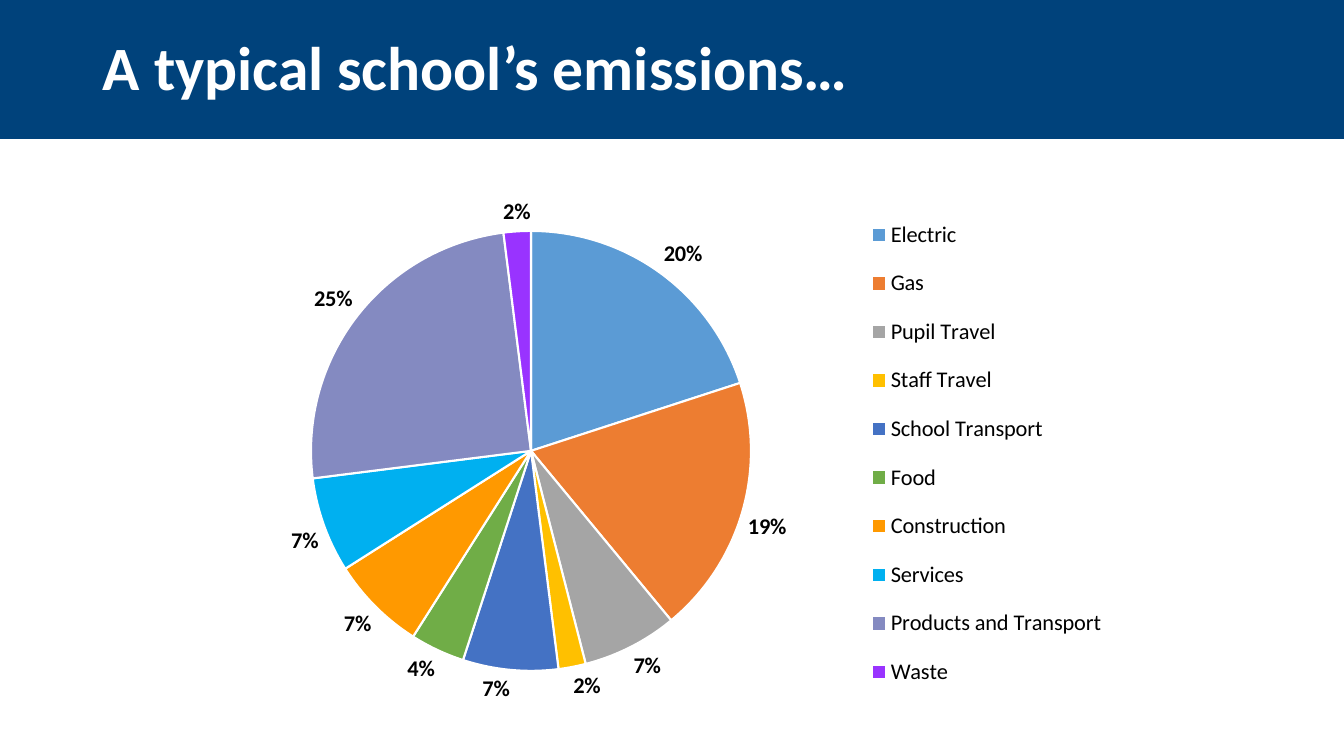
from pptx import Presentation
from pptx.chart.data import CategoryChartData
from pptx.dml.color import RGBColor
from pptx.enum.chart import XL_CHART_TYPE as ChartType
from pptx.enum.chart import XL_LABEL_POSITION as LabelPosition
from pptx.enum.chart import XL_LEGEND_POSITION as LegendPosition
from pptx.enum.shapes import MSO_SHAPE as Shape
from pptx.enum.text import MSO_ANCHOR as Anchor
from pptx.oxml import parse_xml
from pptx.oxml.ns import nsdecls, qn
from pptx.util import Emu, Inches, Pt

# Content
TITLE = "A typical school’s emissions…"
EMISSIONS = [  # source, percent, colour
    ("Electric", 20, "5B9BD5"),
    ("Gas", 19, "ED7D31"),
    ("Pupil Travel", 7, "A5A5A5"),
    ("Staff Travel", 2, "FFC000"),
    ("School Transport", 7, "4472C4"),
    ("Food", 4, "70AD47"),
    ("Construction", 7, "FF9900"),
    ("Services", 7, "00B0F0"),
    ("Products and Transport", 25, "848AC1"),
    ("Waste", 2, "9933FF"),
]
COLORS = {"banner": "00427B", "white": "FFFFFF", "black": "000000"}
FONT = "Calibri"

# Geometry in px: left, top, width, height
PX = Inches(1) / 100.8
BANNER = (0, 0, 1344, 139)
TITLE_BOX = (93, 22, 1159, 98)
CHART = (192, 183, 944, 535)
PIE = (311, 231, 440, 440)
LEGEND = (862, 200, 250, 507)


def px(*lengths):
    return [Emu(round(length * PX)) for length in lengths]


def color(name):
    return RGBColor.from_string(COLORS.get(name, name))


def style(font, size, name, bold=False):
    font.name, font.size, font.bold = FONT, Pt(size), bold
    font.color.rgb = color(name)


def manual_layout(area, inner=False):
    """Layout element placing an area as fractions of the chart."""
    left, top, width, height = CHART
    fractions = {
        "x": (area[0] - left) / width,
        "y": (area[1] - top) / height,
        "w": area[2] / width,
        "h": area[3] / height,
    }
    target = '<c:layoutTarget val="inner"/>' if inner else ""
    modes = '<c:xMode val="edge"/><c:yMode val="edge"/>'
    sizes = "".join(f'<c:{key} val="{part:.4f}"/>' for key, part in fractions.items())
    return parse_xml(
        f'<c:layout {nsdecls("c")}><c:manualLayout>{target}{modes}{sizes}'
        "</c:manualLayout></c:layout>"
    )


def drop_layout(element):
    for layout in element.findall(qn("c:layout")):
        element.remove(layout)


deck = Presentation()
deck.slide_width, deck.slide_height = Inches(13.333), Inches(7.5)
page = deck.slides.add_slide(deck.slide_layouts[6])

# Banner and title
banner = page.shapes.add_shape(Shape.RECTANGLE, *px(*BANNER))
banner.shadow.inherit = False
banner.fill.solid()
banner.fill.fore_color.rgb = color("banner")
banner.line.fill.background()

box = page.shapes.add_textbox(*px(*TITLE_BOX))
frame = box.text_frame
frame.word_wrap = True
frame.vertical_anchor = Anchor.MIDDLE
frame.text = TITLE
para = frame.paragraphs[0]
para.line_spacing = 0.9
style(para.runs[0].font, 44, "white", bold=True)

# Pie chart
data = CategoryChartData()
data.categories = [source for source, _, _ in EMISSIONS]
data.add_series("Series 1", [percent for _, percent, _ in EMISSIONS])
chart = page.shapes.add_chart(ChartType.PIE, *px(*CHART), data).chart
chart.has_title = False
style(chart.font, 10, "black")

plot = chart.plots[0]
plot.vary_by_categories = True
for index, (_, _, fill) in enumerate(EMISSIONS):
    slice_format = plot.series[0].points[index].format
    slice_format.fill.solid()
    slice_format.fill.fore_color.rgb = color(fill)
    slice_format.line.color.rgb = color("white")
    slice_format.line.width = Pt(1.5)

labels = plot.series[0].data_labels
labels.show_percentage = True
labels.show_value = False
labels.number_format, labels.number_format_is_linked = "0%", False
labels.position = LabelPosition.OUTSIDE_END
style(labels.font, 16, "black", bold=True)

# Legend and placement inside the chart
chart.has_legend = True
legend = chart.legend
legend.position = LegendPosition.RIGHT
legend.include_in_layout = False
style(legend.font, 16, "black")

legend_element = legend._element
drop_layout(legend_element)
legend_element.find(qn("c:legendPos")).addnext(manual_layout(LEGEND))
plot_area = plot._element.getparent()
drop_layout(plot_area)
plot_area.insert(0, manual_layout(PIE, inner=True))

deck.save("out.pptx")
